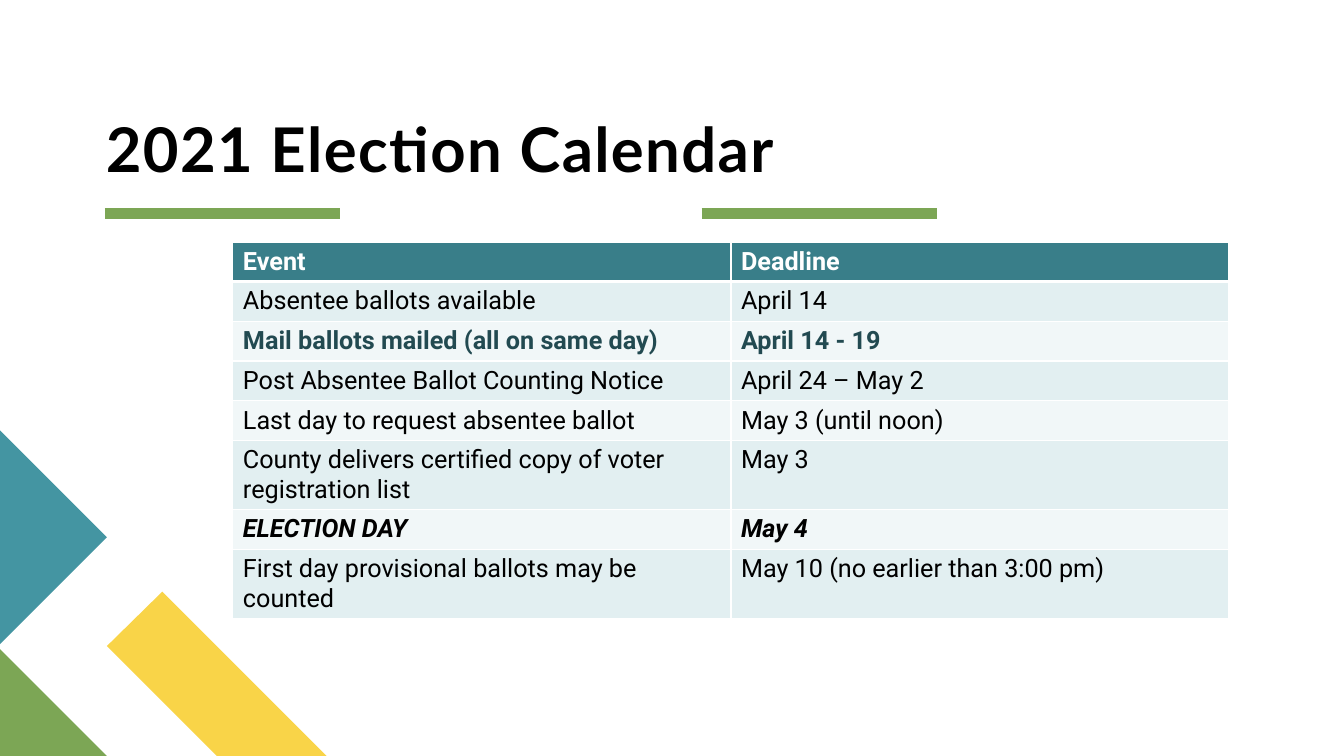
from lxml import etree
from pptx import Presentation
from pptx.dml.color import RGBColor
from pptx.enum.shapes import MSO_CONNECTOR
from pptx.enum.text import MSO_ANCHOR, MSO_AUTO_SIZE, PP_ALIGN
from pptx.oxml import parse_xml
from pptx.oxml.ns import nsdecls, qn
from pptx.util import Inches, Pt

WHITE = RGBColor(0xFF, 0xFF, 0xFF)
BLACK = RGBColor(0x00, 0x00, 0x00)
GREEN = RGBColor(0x7C, 0xA6, 0x55)
YELLOW = RGBColor(0xF9, 0xD4, 0x48)
TEAL = RGBColor(0x44, 0x95, 0xA2)
HEADER_TEAL = RGBColor(0x39, 0x7E, 0x89)
DARK_TEAL = RGBColor(0x22, 0x4A, 0x51)
BAND_DARK = RGBColor(0xE2, 0xEF, 0xF1)
BAND_LIGHT = RGBColor(0xF1, 0xF7, 0xF8)

deck = Presentation()
deck.slide_width = Inches(13.33)
deck.slide_height = Inches(7.5)
page = deck.slides.add_slide(deck.slide_layouts[5])

# Corner decoration
corner_pieces = [
    (YELLOW, [(3.24, 7.5), (2.15, 7.5), (1.06, 6.41), (1.61, 5.87)]),
    (GREEN, [(1.06, 7.5), (0, 7.5), (0, 6.44)]),
    (TEAL, [(0, 4.27), (1.06, 5.33), (0, 6.39)]),
]
for color, corners in corner_pieces:
    points = [(Inches(x), Inches(y)) for x, y in corners]
    builder = page.shapes.build_freeform(*points[0])
    builder.add_line_segments(points[1:], close=True)
    piece = builder.convert_to_shape()
    piece.shadow.inherit = False
    piece.fill.solid()
    piece.fill.fore_color.rgb = color
    piece.line.fill.background()

# Green rules under the title
for left in (1.04, 6.96):
    rule = page.shapes.add_connector(
        MSO_CONNECTOR.STRAIGHT, Inches(left), Inches(2.12), Inches(left + 2.33), Inches(2.12))
    rule.line.color.rgb = GREEN
    rule.line.width = Pt(8)
    etree.SubElement(rule._element.spPr, qn("a:effectLst"))

# Title
title = page.shapes.title
title.left, title.top = Inches(1.05), Inches(0.96)
title.width, title.height = Inches(8.67), Inches(0.88)
frame = title.text_frame
frame.text = "2021 Election Calendar"
frame.auto_size = MSO_AUTO_SIZE.NONE
frame.vertical_anchor = MSO_ANCHOR.BOTTOM
frame.margin_left = frame.margin_right = frame.margin_top = frame.margin_bottom = 0
para = frame.paragraphs[0]
para.alignment = PP_ALIGN.LEFT
para.line_spacing = 0.9
span = para.runs[0]
span.font.name = "Lato"
span.font.size = Pt(44)
span.font.bold = True
span.font.color.rgb = BLACK
span._r.get_or_add_rPr().set("spc", "100")

# Calendar table: event, deadline, row height, text colour, bold, italic
calendar = [
    ("Event", "Deadline", 0.39, WHITE, True, False),
    ("Absentee ballots available", "April 14", 0.39, BLACK, False, False),
    ("Mail ballots mailed (all on same day)", "April 14 - 19", 0.39, DARK_TEAL, True, False),
    ("Post Absentee Ballot Counting Notice", "April 24 – May 2", 0.39, BLACK, False, False),
    ("Last day to request absentee ballot", "May 3 (until noon)", 0.39, BLACK, False, False),
    ("County delivers certified copy of voter registration list", "May 3",
     0.68, BLACK, False, False),
    ("ELECTION DAY", "May 4", 0.39, BLACK, True, True),
    ("First day provisional ballots may be counted", "May 10 (no earlier than 3:00 pm)",
     0.68, BLACK, False, False),
]
table = page.shapes.add_table(
    len(calendar), 2, Inches(2.31), Inches(2.4), Inches(9.88), Inches(3.7)).table
for column in table.columns:
    column.width = Inches(4.94)

for row, (event, deadline, height, color, bold, italic) in enumerate(calendar):
    table.rows[row].height = Inches(height)
    for col, text in enumerate((event, deadline)):
        cell = table.cell(row, col)
        cell.text_frame.text = text
        font = cell.text_frame.paragraphs[0].runs[0].font
        font.name = "Roboto"
        font.size = Pt(18)
        font.bold = bold
        font.italic = italic
        font.color.rgb = color
        cell.fill.solid()
        band = BAND_DARK if row % 2 else BAND_LIGHT
        cell.fill.fore_color.rgb = band if row else HEADER_TEAL

        # White borders, thicker between header and body
        for position, side in enumerate(("lnL", "lnR", "lnT", "lnB")):
            thick = (row, side) in ((0, "lnB"), (1, "lnT"))
            border = parse_xml(
                f'<a:{side} {nsdecls("a")} w="{Pt(3 if thick else 1)}">'
                f'<a:solidFill><a:srgbClr val="{WHITE}"/></a:solidFill></a:{side}>')
            cell._tc.get_or_add_tcPr().insert(position, border)

deck.save("out.pptx")
